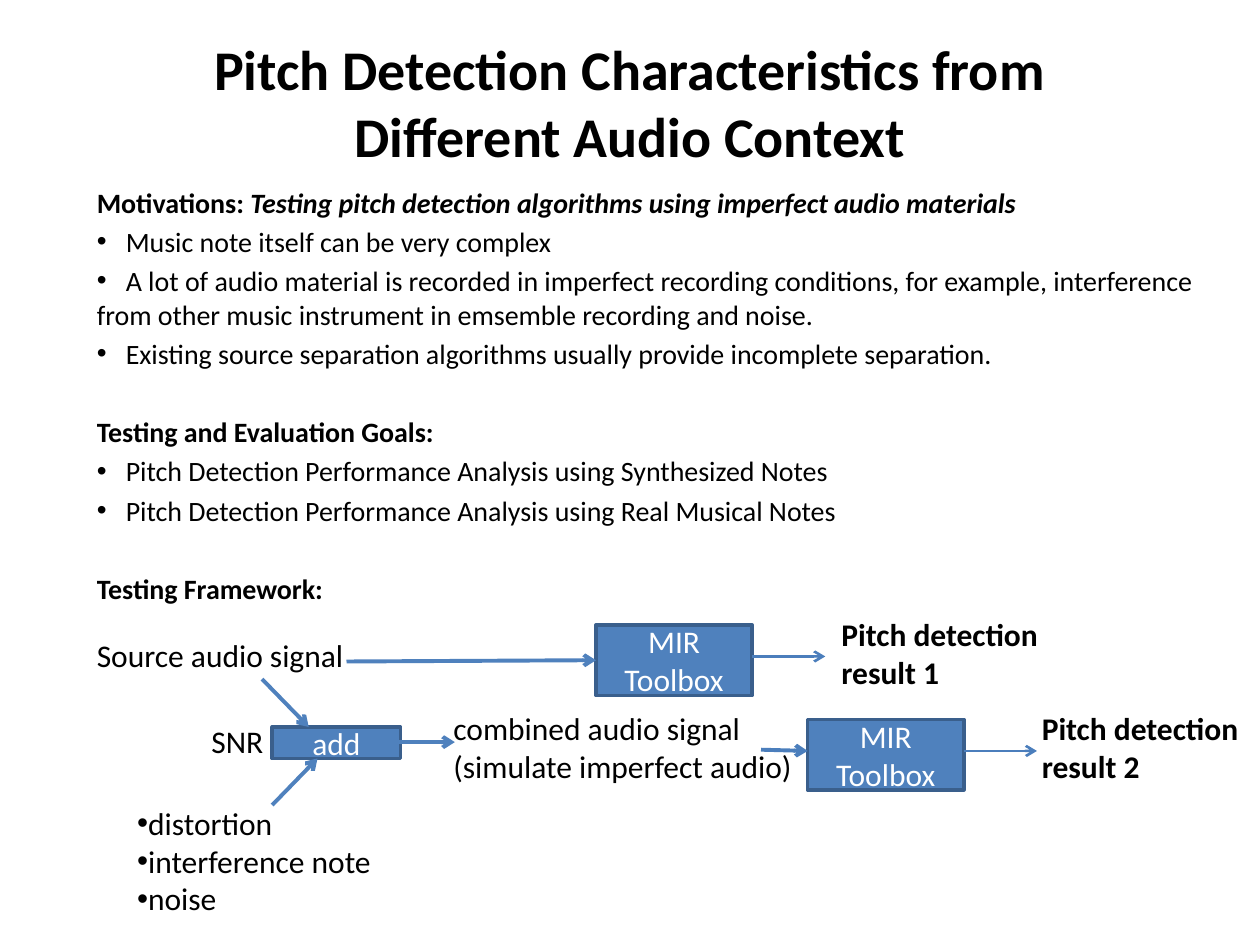
from lxml import etree
from pptx import Presentation
from pptx.dml.color import RGBColor
from pptx.enum.shapes import MSO_CONNECTOR, MSO_SHAPE
from pptx.enum.text import MSO_ANCHOR, PP_ALIGN
from pptx.oxml.ns import qn
from pptx.util import Inches, Pt

BLACK, WHITE = "000000", "FFFFFF"
BLUE, DARK_BLUE, ARROW_BLUE = "4F81BD", "3A5F8C", "4B7EBC"
LEFT, RIGHT = 1, 3  # connection sites of a rectangle

MOTIVATION_POINTS = [
    "Music note itself can be very complex",
    "A lot of audio material is recorded in imperfect recording conditions, "
    "for example, interference from other music instrument in emsemble "
    "recording and noise.",
    "Existing source separation algorithms usually provide incomplete separation.",
]
GOALS = [
    "Pitch Detection Performance Analysis using Synthesized Notes",
    "Pitch Detection Performance Analysis using Real Musical Notes",
]
# Each section: heading, italic remark, bullet points
SECTIONS = [
    ("Motivations: ", "Testing pitch detection algorithms using imperfect audio materials",
     MOTIVATION_POINTS),
    ("Testing and Evaluation Goals:", "", GOALS),
    ("Testing Framework:", "", []),
]


def rgb(color):
    return RGBColor.from_string(color)


def add_run(p, text, size, color=BLACK, **formats):
    r = p.add_run()
    r.text = text
    r.font.color.rgb = rgb(color)
    for name, value in {"name": "Calibri", "size": Pt(size), **formats}.items():
        setattr(r.font, name, value)


def add_bullet(p, tab=None):
    """Put a bullet at the left edge, with an optional tab stop after it."""
    pPr = p._p.get_or_add_pPr()
    pPr.set("marL", "0")
    pPr.set("indent", "0")
    etree.SubElement(pPr, qn("a:buFont"), typeface="Arial")
    etree.SubElement(pPr, qn("a:buChar"), char="•")
    if tab is not None:
        tabs = etree.SubElement(pPr, qn("a:tabLst"))
        etree.SubElement(tabs, qn("a:tab"), pos=str(tab), algn="l")


def add_text_frame(slide, x, y, w, h):
    tf = slide.shapes.add_textbox(Inches(x), Inches(y), Inches(w), Inches(h)).text_frame
    tf.word_wrap = True
    return tf


def next_paragraph(tf, first):
    return tf.paragraphs[0] if first else tf.add_paragraph()


def add_label(slide, x, y, w, h, lines, bullets=False, bold=False):
    tf = add_text_frame(slide, x, y, w, h)
    for i, line in enumerate(lines):
        p = next_paragraph(tf, i == 0)
        if bullets:
            add_bullet(p)
        add_run(p, line, 18, bold=bold)


def add_block(slide, x, y, w, h, text):
    sp = slide.shapes.add_shape(MSO_SHAPE.RECTANGLE, Inches(x), Inches(y),
                                Inches(w), Inches(h))
    sp.shadow.inherit = False
    sp.fill.solid()
    sp.fill.fore_color.rgb = rgb(BLUE)
    sp.line.color.rgb = rgb(DARK_BLUE)
    sp.line.width = Pt(2)
    tf = sp.text_frame
    tf.word_wrap = True
    tf.vertical_anchor = MSO_ANCHOR.MIDDLE
    p = tf.paragraphs[0]
    p.alignment = PP_ALIGN.CENTER
    add_run(p, text, 18, WHITE)
    return sp


def add_arrow(slide, x1, y1, x2, y2, color=BLUE, width=2.25):
    line = slide.shapes.add_connector(MSO_CONNECTOR.STRAIGHT, Inches(x1), Inches(y1),
                                      Inches(x2), Inches(y2))
    line.line.color.rgb = rgb(color)
    line.line.width = Pt(width)
    etree.SubElement(line.line._get_or_add_ln(), qn("a:tailEnd"), type="arrow")
    etree.SubElement(line._element.spPr, qn("a:effectLst"))
    return line


def add_title(slide, x, y, w, h):
    tf = add_text_frame(slide, x, y, w, h)
    tf.vertical_anchor = MSO_ANCHOR.MIDDLE
    p = tf.paragraphs[0]
    p.alignment = PP_ALIGN.CENTER
    add_run(p, "Pitch Detection Characteristics from Different Audio Context", 32, bold=True)


def add_sections(slide, x, y, w, h):
    tf = add_text_frame(slide, x, y, w, h)
    for i, (heading, remark, points) in enumerate(SECTIONS):
        p = next_paragraph(tf, i == 0)
        p.space_before = Pt(25.6 if i else 3.2)
        add_run(p, heading, 16, bold=True)
        if remark:
            add_run(p, remark, 16, bold=True, italic=True)
        for point in points:
            p = tf.add_paragraph()
            p.space_before = Pt(3.2)
            add_bullet(p, Inches(0.23))
            add_run(p, "\t" + point, 16)


def add_detector(slide, x, y, result_gap, number):
    """Toolbox block, its output arrow and the result label."""
    w, h = 1.24, 0.56
    block = add_block(slide, x, y, w, h, "MIR Toolbox")
    add_arrow(slide, x + w, y + 0.25, x + w + 0.58, y + 0.25, ARROW_BLUE, 1.5)
    add_label(slide, x + w + result_gap, y - 0.13, 2.33, 0.71,
              [f"Pitch detection result {number}"], bold=True)
    return block


def add_framework(slide, x, y):
    """Signal flow: a clean path on top, a mixed path below it."""
    add_label(slide, x, y + 0.17, 2.33, 0.3, ["Source audio signal"])
    detector = add_detector(slide, x + 4.06, y + 0.13, 0.61, 1)
    source = add_arrow(slide, x + 2.08, y + 0.42, x + 4.06, y + 0.41)
    source.end_connect(detector, LEFT)

    add_label(slide, x + 0.91, y + 0.85, 0.67, 0.4, ["SNR"])
    add_block(slide, x + 1.49, y + 0.94, 1.02, 0.25, "add")
    add_arrow(slide, x + 1.41, y + 0.56, x + 1.78, y + 0.94)
    add_arrow(slide, x + 1.49, y + 1.56, x + 1.85, y + 1.19)
    add_arrow(slide, x + 2.43, y + 1.06, x + 2.94, y + 1.06)
    add_label(slide, x + 0.32, y + 1.5, 2.33, 0.75,
              ["distortion", "interference note", "noise"], bullets=True)

    add_label(slide, x + 2.83, y + 0.75, 3.08, 0.71,
              ["combined audio signal", "(simulate imperfect audio)"])
    add_detector(slide, x + 5.74, y + 0.88, 0.52, 2)
    add_arrow(slide, x + 5.37, y + 1.12, x + 5.74, y + 1.13, ARROW_BLUE)


def main():
    prs = Presentation()
    prs.slide_width, prs.slide_height = Inches(10), Inches(7.5)
    slide = prs.slides.add_slide(prs.slide_layouts[6])
    add_title(slide, 0.75, 0, 8.5, 1.61)
    add_sections(slide, 0.67, 1.42, 8.92, 4.08)
    add_framework(slide, 0.67, 4.83)
    prs.save("out.pptx")


if __name__ == "__main__":
    main()
